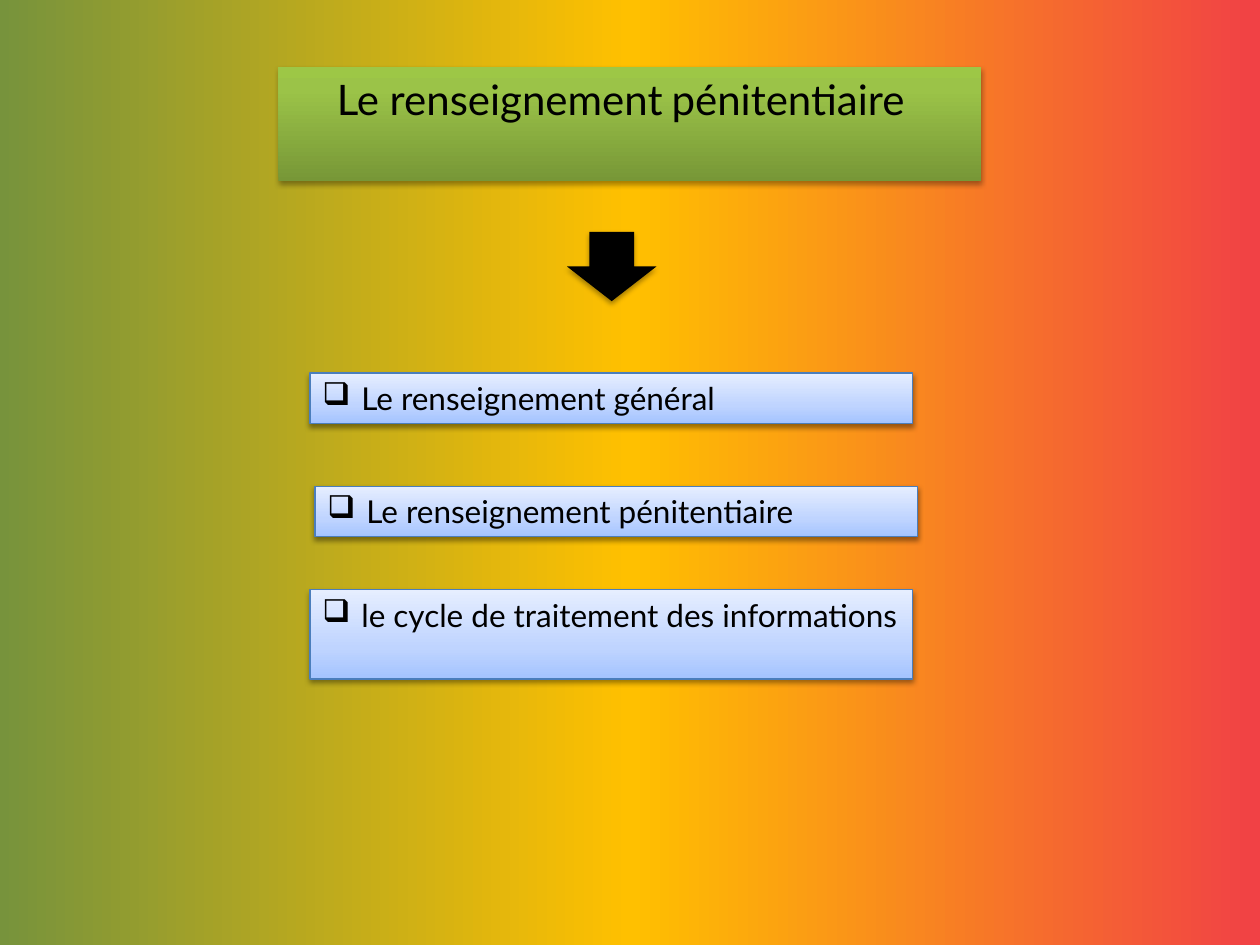
import pptx
import pptx.dml.color
import pptx.enum.shapes
import pptx.enum.text
import pptx.oxml.ns
import pptx.util
from lxml import etree

Inches = pptx.util.Inches
Pt = pptx.util.Pt
qn = pptx.oxml.ns.qn
Shapes = pptx.enum.shapes.MSO_SHAPE
Align = pptx.enum.text.PP_ALIGN

COLORS = {
    "text": "000000", "faint": "FFFFFF", "arrow": "000000",
    "shadow": "000000", "border": "4B7EBC",
}
GRADIENTS = {
    "page": [(0, "77933C"), (50, "FFC000"), (100, "F14145")],
    "title": [(0, "779737"), (80, "9BC348"), (100, "9DC746")],
    "item": [(0, "A4C4FF"), (35, "BFD4FF"), (100, "E6EEFF")],
}


class SlideBuilder:
    """Holds the style and the current slide, and draws each kind of element."""

    def __init__(self, deck, font="Lato"):
        self.font = font
        self.page = deck.slides.add_slide(deck.slide_layouts[5])
        self.paint(self.page.background.fill, self.page.element, "page", 0)

    def color(self, name):
        return pptx.dml.color.RGBColor.from_string(COLORS[name])

    def paint(self, fill, owner, gradient, angle):
        fill.gradient()
        fill.gradient_angle = angle
        stops = owner.find(".//" + qn("a:gsLst"))
        for stop in list(stops):
            stops.remove(stop)
        for position, value in GRADIENTS[gradient]:
            stop = etree.SubElement(stops, qn("a:gs"), pos=str(position * 1000))
            etree.SubElement(stop, qn("a:srgbClr"), val=value)

    def shade(self, shape, opacity, distance):
        shape.shadow.inherit = False
        effects = shape.element.spPr.find(qn("a:effectLst"))
        shadow = etree.SubElement(
            effects, qn("a:outerShdw"), blurRad=str(Pt(3.1)),
            dist=str(Pt(distance)), dir="5400000", rotWithShape="0")
        tint = etree.SubElement(shadow, qn("a:srgbClr"), val=COLORS["shadow"])
        etree.SubElement(tint, qn("a:alpha"), val=str(opacity * 1000))

    def prepare_text(self, shape, align):
        frame = shape.text_frame
        frame.word_wrap = True
        frame.auto_size = pptx.enum.text.MSO_AUTO_SIZE.NONE
        frame.vertical_anchor = pptx.enum.text.MSO_ANCHOR.TOP
        para = frame.paragraphs[0]
        para.alignment = align
        return para

    def span(self, para, text, size, font=None, color="text", bold=False):
        span = para.add_run()
        span.text = text
        span.font.size = Pt(size)
        span.font.name = font or self.font
        span.font.bold = bold
        span.font.color.rgb = self.color(color)

    def title(self, left, top, width, height):
        box = self.page.shapes.title
        box.left, box.top = Inches(left), Inches(top)
        box.width, box.height = Inches(width), Inches(height)
        self.paint(box.fill, box.element, "title", 90)
        box.line.fill.background()
        self.shade(box, 35, 1.8)
        para = self.prepare_text(box, Align.CENTER)
        self.span(para, "Le renseignement", 24)
        self.span(para, " ", 20)
        self.span(para, "pénitentiaire ", 24)
        self.span(para, " ", 20, "Calibri", "faint", True)

    def shape(self, kind, left, top, width, height):
        return self.page.shapes.add_shape(
            kind, Inches(left), Inches(top), Inches(width), Inches(height))

    def arrow(self, left, top, width, height):
        arrow = self.shape(Shapes.DOWN_ARROW, left, top, width, height)
        arrow.fill.solid()
        arrow.fill.fore_color.rgb = self.color("arrow")
        arrow.line.fill.background()
        self.shade(arrow, 35, 1.8)

    def item(self, text, left, top, height, width=4.78):
        box = self.shape(Shapes.RECTANGLE, left, top, width, height)
        self.paint(box.fill, box.element, "item", 90)
        box.line.color.rgb = self.color("border")
        box.line.width = Pt(0.75)
        self.shade(box, 38, 1.6)
        para = self.prepare_text(box, Align.LEFT)
        self.span(para, text, 18)
        indent = Inches(0.31)
        properties = para._p.get_or_add_pPr()
        properties.set("marL", str(indent))
        properties.set("indent", str(-indent))
        etree.SubElement(properties, qn("a:buChar"), char="❑")


def main():
    deck = pptx.Presentation()
    deck.slide_width, deck.slide_height = Inches(10), Inches(7.5)
    slide = SlideBuilder(deck)
    slide.title(2.21, 0.53, 5.58, 0.91)
    slide.arrow(4.5, 1.84, 0.71, 0.55)
    for text, left, top, height in [
        ("Le renseignement général", 2.46, 2.96, 0.4),
        ("Le renseignement pénitentiaire", 2.5, 3.86, 0.4),
        ("le cycle de traitement des informations", 2.46, 4.68, 0.71),
    ]:
        slide.item(text, left, top, height)
    deck.save("out.pptx")


if __name__ == "__main__":
    main()
